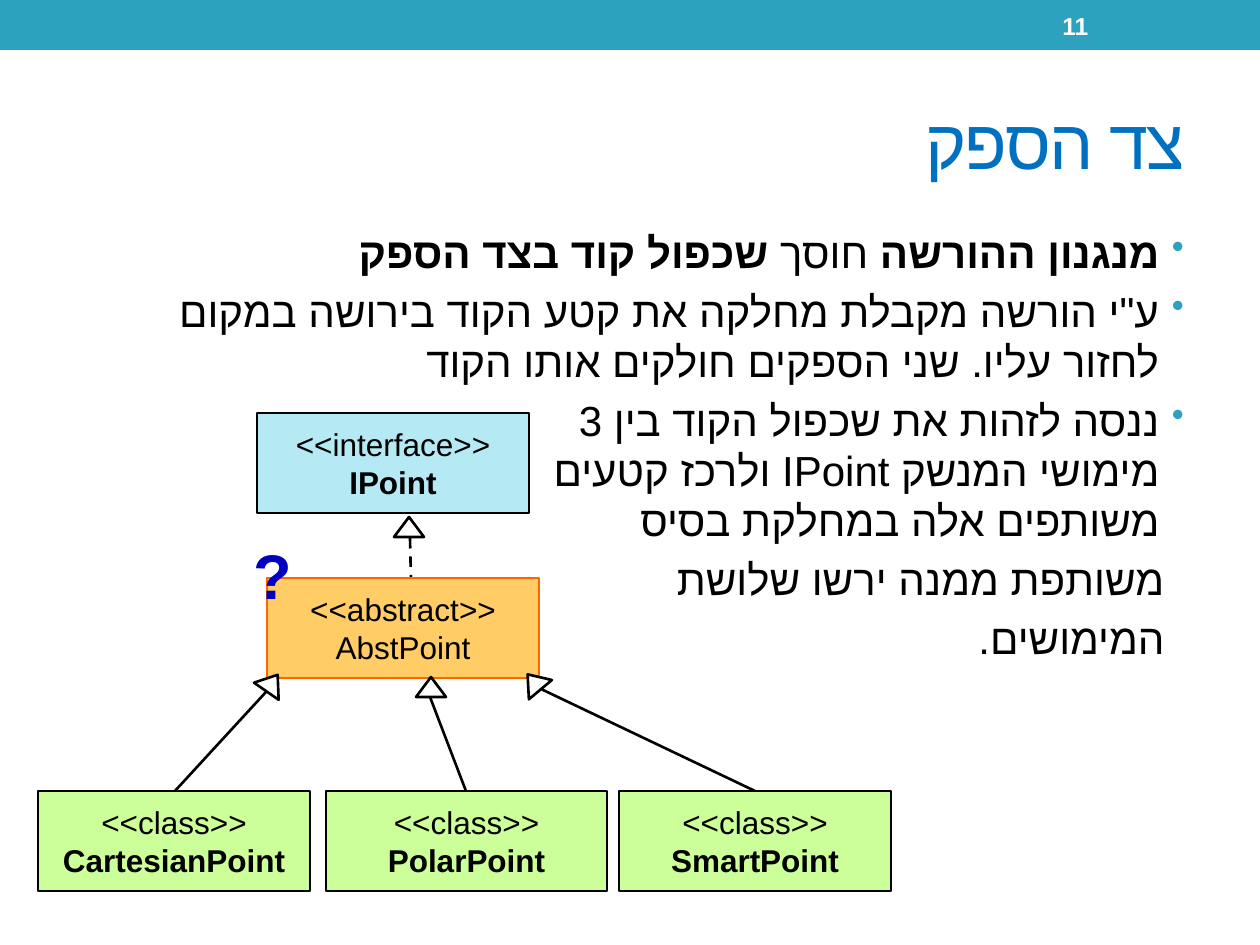
from dataclasses import dataclass

from lxml.etree import SubElement as Sub
from pptx import Presentation
from pptx.dml.color import RGBColor as RGB
from pptx.enum.dml import MSO_LINE as Dash
from pptx.enum.shapes import MSO_CONNECTOR as Conn, MSO_SHAPE as Kind
from pptx.enum.text import MSO_ANCHOR as Anchor, PP_ALIGN as Align
from pptx.oxml.ns import qn
from pptx.util import Pt

SCALE = 914400 / 126  # EMU in one px


@dataclass(frozen=True)
class Theme:
    face: str = "Arial"
    teal: str = "2DA2BF"
    blue: str = "0070C0"
    navy: str = "0000C0"
    black: str = "000000"
    white: str = "FFFFFF"
    sky: str = "B5E9F4"
    amber: str = "FFCC66"
    orange: str = "FF6600"
    lime: str = "CCFF99"
    title: int = 40
    mark: int = 36
    body: int = 24
    label: int = 18
    number: int = 14
    thin: float = 0.75
    thick: float = 1.5


T = Theme()


def px(n):
    return round(n * SCALE)


def style(para, size, color, align, bold=False):
    """Set font, alignment and right-to-left order of a paragraph."""
    font = para.font
    font.name, font.size, font.bold = T.face, Pt(size), bold
    font.color.rgb = RGB.from_string(color)
    para.alignment = align
    props = para._p.get_or_add_pPr()
    props.set("rtl", "1")
    base = props.find(qn("a:defRPr"))
    Sub(base, qn("a:cs"), typeface=T.face)
    return base


def indent(para, left, first=0, bullet=False):
    props = para._p.get_or_add_pPr()
    props.set("marL", str(px(left)))
    props.set("indent", str(px(first)))
    if bullet:
        base = props.find(qn("a:defRPr"))
        tint = Sub(props, qn("a:buClr"))
        Sub(tint, qn("a:srgbClr"), val=T.teal)
        size = Sub(props, qn("a:buSzPct"), val="85000")
        char = Sub(props, qn("a:buChar"), char="•")
        for part in (tint, size, char):
            base.addprevious(part)


def shape(slide, kind, box, fill, line=None, width=T.thin, turn=0):
    item = slide.shapes.add_shape(kind, *map(px, box))
    item.shadow.inherit = False
    item.rotation = turn
    item.fill.solid()
    item.fill.fore_color.rgb = RGB.from_string(fill)
    if line:
        item.line.color.rgb = RGB.from_string(line)
        item.line.width = Pt(width)
    else:
        item.line.fill.background()
    return item


def text(slide, box, wrap=True, anchor=Anchor.TOP):
    frame = slide.shapes.add_textbox(*map(px, box)).text_frame
    frame.word_wrap = wrap
    frame.vertical_anchor = anchor
    return frame


def node(slide, box, kind, name, fill, line=T.black, bold=True):
    """Draw a type box with its stereotype above its name."""
    frame = shape(slide, Kind.FLOWCHART_PROCESS, box, fill, line).text_frame
    frame.word_wrap = False
    frame.vertical_anchor = Anchor.MIDDLE
    head, tail = frame.paragraphs[0], frame.add_paragraph()
    head.text, tail.text = f"<<{kind}>>", name
    style(head, T.label, T.black, Align.CENTER)
    style(tail, T.label, T.black, Align.CENTER, bold)


def link(slide, ends, dash=False):
    line = slide.shapes.add_connector(Conn.STRAIGHT, *map(px, ends))
    line.line.color.rgb = RGB.from_string(T.black)
    line.line.width = Pt(T.thick)
    if dash:
        line.line.dash_style = Dash.DASH
    Sub(line._element.spPr, qn("a:effectLst"))


def tip(slide, left, top, turn=0):
    """Draw the hollow triangle that ends an inheritance link."""
    shape(slide, Kind.FLOWCHART_EXTRACT, (left, top, 30, 20),
          T.white, T.black, T.thick, turn)


def header(slide):
    shape(slide, Kind.RECTANGLE, (0, 0, 1260, 50), T.teal)
    title = text(slide, (63, 73, 1134, 136), anchor=Anchor.MIDDLE).paragraphs[0]
    title.text = "צד הספק"
    style(title, T.title, T.blue, Align.RIGHT).set("spc", "-100")


def number(slide):
    para = text(slide, (1050, 3, 147, 45), anchor=Anchor.MIDDLE).paragraphs[0]
    para.text = "11"
    style(para, T.number, T.white, Align.LEFT, True)


def body(slide):
    # Each point: is it bulleted, then its (words, bold) parts
    points = [
        (True, [("מנגנון ההורשה", True), (" חוסך ", False),
                ("שכפול קוד בצד הספק", True)]),
        (True, [("ע\"י הורשה מקבלת מחלקה את קטע הקוד בירושה במקום לחזור "
                 "עליו. שני הספקים חולקים אותו הקוד", False)]),
        (True, [("ננסה לזהות את שכפול הקוד בין 3\n"
                 "מימושי המנשק IPoint ולרכז קטעים\n"
                 "משותפים אלה במחלקת בסיס", False)]),
        (False, [("משותפת ממנה ירשו שלושת", False)]),
        (False, [("המימושים.", False)]),
    ]
    frame = text(slide, (63, 220, 1134, 672))
    for i, (bullet, parts) in enumerate(points):
        para = frame.add_paragraph() if i else frame.paragraphs[0]
        para.space_before = Pt(T.body * 0.2)
        style(para, T.body, T.black, Align.RIGHT)
        if bullet:
            indent(para, 25, -25, True)
        else:
            indent(para, 20)
        for words, bold in parts:
            for j, row in enumerate(words.split("\n")):
                if j:
                    para.add_line_break()
                run = para.add_run()
                run.text = row
                if bold:
                    run.font.bold = True


def diagram(slide):
    # Interface and the abstract base
    node(slide, (257, 413, 272, 100), "interface", "IPoint", T.sky)
    link(slide, (410, 538, 411, 581), dash=True)
    tip(slide, 394, 517)
    node(slide, (267, 578, 272, 100), "abstract", "AbstPoint",
         T.amber, T.orange, False)

    # Three classes
    for name, left, width in (("CartesianPoint", 38, 272),
                              ("PolarPoint", 326, 281),
                              ("SmartPoint", 619, 272)):
        node(slide, (left, 791, width, 100), "class", name, T.lime)

    # Inheritance links with their tips
    for ends, spot in (((175, 791, 266, 692), (257, 673, 34.7)),
                       ((466, 791, 430, 697), (416, 677)),
                       ((755, 791, 541, 689), (519, 672, 320))):
        link(slide, ends)
        tip(slide, *spot)

    # Question mark on the abstract base
    mark = text(slide, (241, 530, 64, 88), wrap=False).paragraphs[0]
    mark.text = "?"
    style(mark, T.mark, T.navy, Align.CENTER, True)


def main():
    deck = Presentation()
    deck.slide_width, deck.slide_height = px(1260), px(945)
    slide = deck.slides.add_slide(deck.slide_layouts[6])
    header(slide)
    body(slide)
    number(slide)
    diagram(slide)
    deck.save("out.pptx")


if __name__ == "__main__":
    main()
